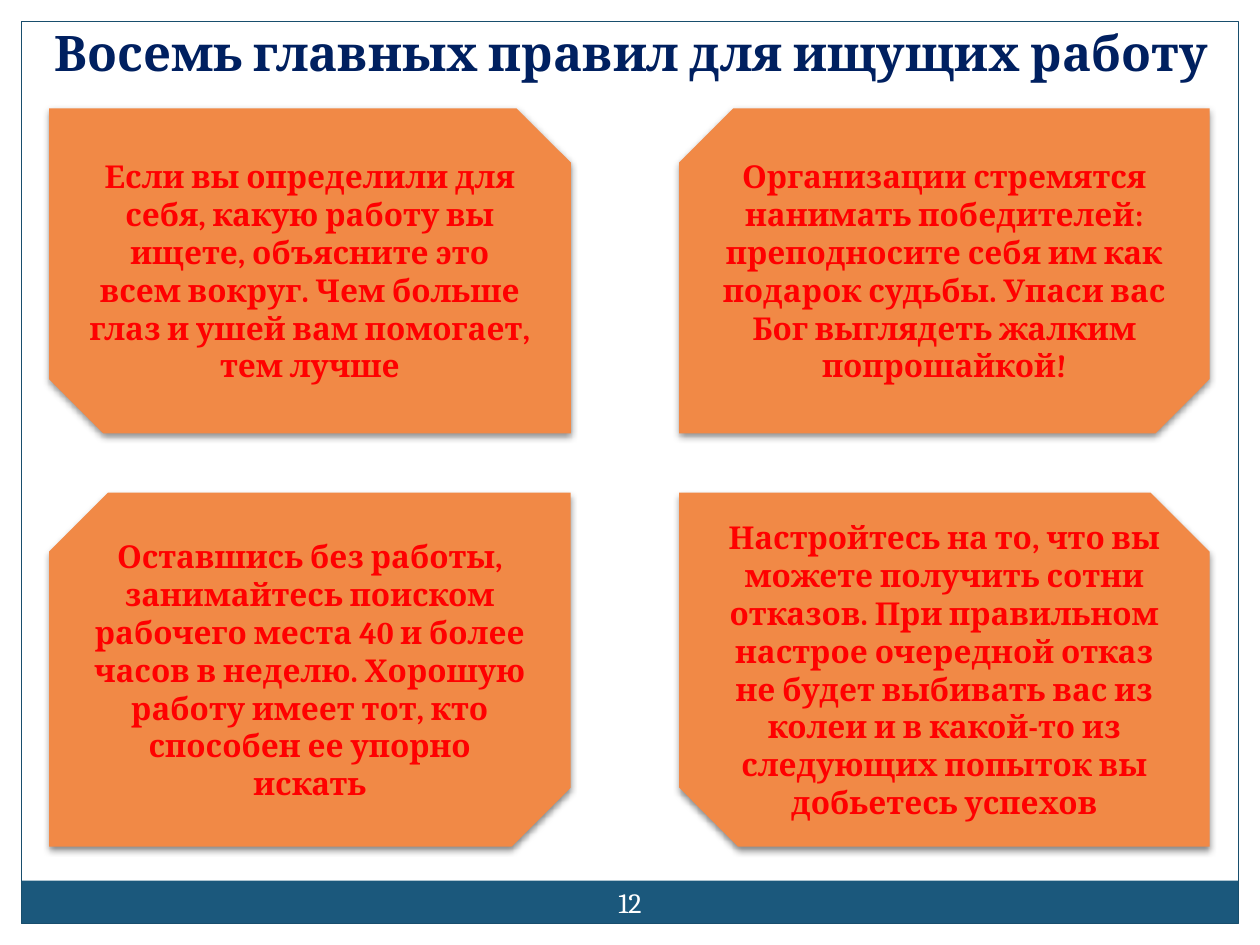
import dataclasses

import lxml.etree
import pptx
import pptx.dml.color
import pptx.enum.shapes
import pptx.enum.text
import pptx.oxml.ns
import pptx.util

Inches = pptx.util.Inches
Kind = pptx.enum.shapes.MSO_SHAPE
Anchor = pptx.enum.text.MSO_ANCHOR
qn = pptx.oxml.ns.qn


@dataclasses.dataclass(frozen=True)
class Theme:
    font: str = "Cambria"
    band: str = "1B587C"
    frame: str = "184E6D"
    title: str = "002060"
    card: str = "F18946"
    rule: str = "FF0000"
    light: str = "FFFFFF"
    shade: str = "000000"
    head: int = 28
    body: int = 18
    page: int = 16


theme = Theme()

RULES = [
    "Если вы определили для себя, какую работу вы ищете, объясните это всем вокруг. "
    "Чем больше глаз и ушей вам помогает, тем лучше",
    "Организации стремятся нанимать победителей: преподносите себя им как подарок судьбы. "
    "Упаси вас Бог выглядеть жалким попрошайкой!",
    "Оставшись без работы, занимайтесь поиском рабочего места 40 и более часов в неделю. "
    "Хорошую работу имеет тот, кто способен ее упорно искать",
    "Настройтесь на то, что вы можете получить сотни отказов. При правильном настрое "
    "очередной отказ не будет выбивать вас из колеи и в какой-то из следующих попыток "
    "вы добьетесь успехов",
]


def color(code):
    return pptx.dml.color.RGBColor.from_string(code)


def write(shape, text, size, tint, bold=True, anchor=Anchor.MIDDLE):
    frame = shape.text_frame
    frame.word_wrap = True
    frame.vertical_anchor = anchor
    line = frame.paragraphs[0]
    line.alignment = pptx.enum.text.PP_ALIGN.CENTER
    run = line.add_run()
    run.text = text
    font = run.font
    font.name, font.size, font.bold = theme.font, pptx.util.Pt(size), bold
    font.color.rgb = color(tint)


def draw(slide, kind, box, fill=None, edge=None):
    shape = slide.shapes.add_shape(kind, *map(Inches, box))
    shape.shadow.inherit = False
    if fill:
        shape.fill.solid()
        shape.fill.fore_color.rgb = color(fill)
    else:
        shape.fill.background()
    if edge:
        shape.line.color.rgb = color(edge)
        shape.line.width = pptx.util.Pt(0.75)
    else:
        shape.line.fill.background()
    return shape


def shade(shape):
    glow = shape._element.spPr.find(qn("a:effectLst"))
    cast = lxml.etree.SubElement(
        glow, qn("a:outerShdw"), blurRad=str(pptx.util.Pt(4)),
        dist=str(pptx.util.Pt(2)), dir="5400000", rotWithShape="0")
    tint = lxml.etree.SubElement(cast, qn("a:srgbClr"), val=theme.shade)
    lxml.etree.SubElement(tint, qn("a:alpha"), val="45000")


def add_frame(slide, box, page):
    left, top, width, height = box
    deep = 0.34
    base = top + height - deep
    draw(slide, Kind.RECTANGLE, (left, base, width, deep), fill=theme.band)
    draw(slide, Kind.RECTANGLE, box, edge=theme.frame)
    wide, tall = 0.67, 0.48
    spot = (left + (width - wide) / 2, base + (deep - tall) / 2, wide, tall)
    label = slide.shapes.add_textbox(*map(Inches, spot))
    text = label.text_frame
    text.margin_left = text.margin_right = Inches(0.05)
    text.margin_top = text.margin_bottom = Inches(0.05)
    write(label, page, theme.page, theme.light, bold=False)


def add_title(slide, box, text):
    title = slide.shapes.title
    title.left, title.top, title.width, title.height = map(Inches, box)
    title.text_frame.auto_size = pptx.enum.text.MSO_AUTO_SIZE.SHAPE_TO_FIT_TEXT
    write(title, text, theme.head, theme.title, anchor=Anchor.TOP)


def add_rules(slide, box, rules):
    left, top, width, height = box
    cols = [(left, 4.14), (left + width - 4.21, 4.21)]
    rows = [(top, 2.58), (top + height - 2.81, 2.81)]
    for spot, rule in enumerate(rules):
        row, col = divmod(spot, 2)
        (x, wide), (y, tall) = cols[col], rows[row]
        card = draw(slide, Kind.SNIP_2_DIAG_RECTANGLE, (x, y, wide, tall), fill=theme.card)
        if row != col:
            card._element.spPr.find(qn("a:xfrm")).set("flipH", "1")
        shade(card)
        write(card, rule, theme.body, theme.rule)


def main():
    deck = pptx.Presentation()
    deck.slide_width, deck.slide_height = Inches(10), Inches(7.5)
    slide = deck.slides.add_slide(deck.slide_layouts[5])
    add_frame(slide, (0.17, 0.17, 9.66, 7.16), "12")
    add_title(slide, (0.01, 0.13, 10, 0.57), "Восемь главных правил для ищущих работу")
    add_rules(slide, (0.39, 0.86, 9.21, 5.86), RULES)
    deck.save("out.pptx")


if __name__ == "__main__":
    main()
